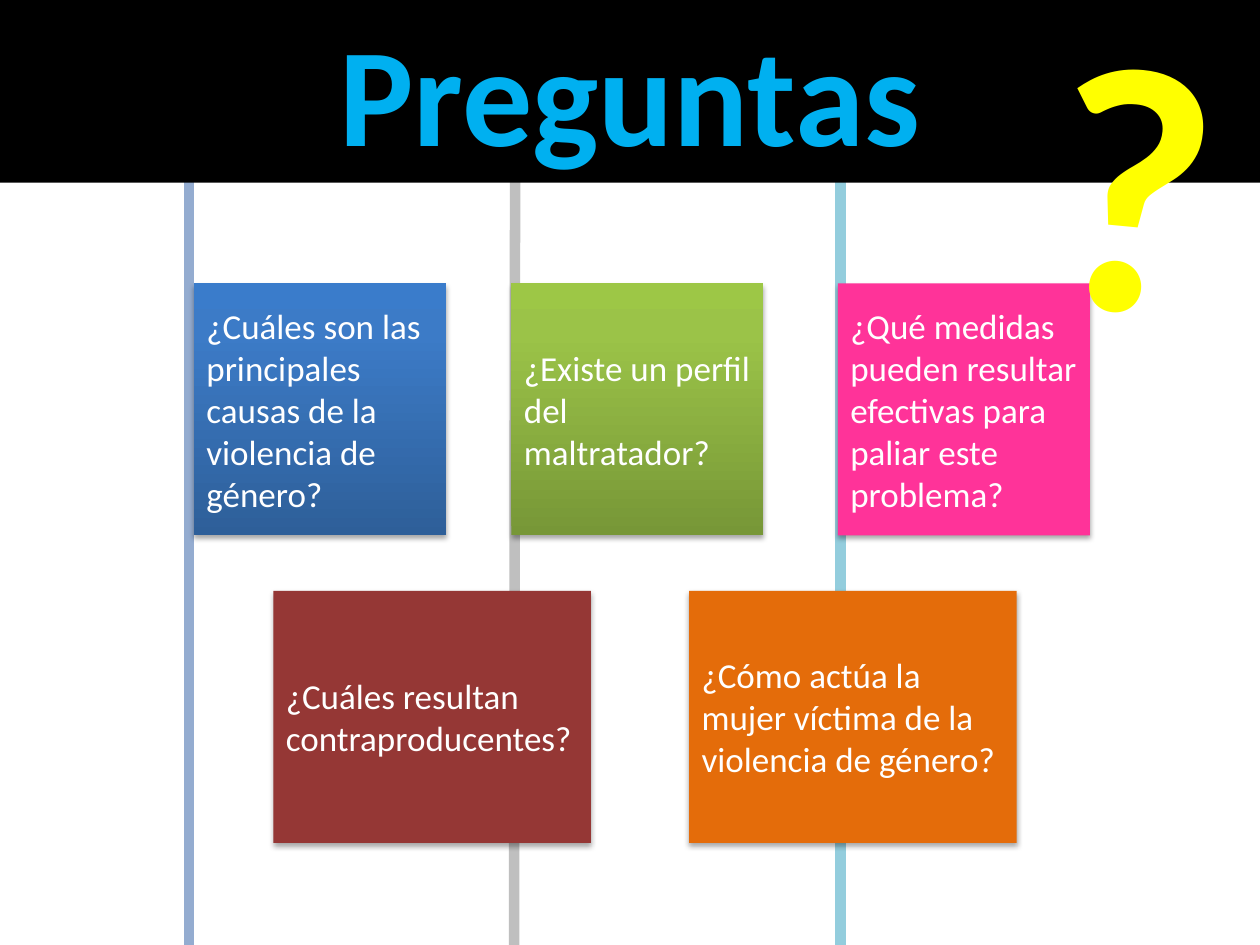
from copy import deepcopy
from dataclasses import dataclass

from lxml.etree import SubElement
from pptx import Presentation
from pptx.dml.color import RGBColor
from pptx.enum.shapes import MSO_CONNECTOR, MSO_SHAPE
from pptx.enum.text import MSO_ANCHOR, PP_ALIGN
from pptx.oxml.ns import qn
from pptx.shapes.autoshape import Shape
from pptx.slide import Slide
from pptx.util import Inches, Pt

FONT = "Calibri"
WHITE = RGBColor(0xFF, 0xFF, 0xFF)
BLACK = RGBColor(0x00, 0x00, 0x00)
SKY = RGBColor(0x00, 0xB0, 0xF0)
YELLOW = RGBColor(0xFF, 0xFF, 0x00)
PINK = RGBColor(0xFF, 0x33, 0x99)
MAROON = RGBColor(0x95, 0x37, 0x35)
ORANGE = RGBColor(0xE4, 0x6C, 0x0A)
STEEL = RGBColor(0x94, 0xAC, 0xD0)
GREY = RGBColor(0xBF, 0xBF, 0xBF)
AQUA = RGBColor(0x93, 0xCD, 0xDD)
# Gradient colours run from the bottom of a card to its top.
BLUES = (RGBColor(0x2E, 0x5F, 0x99), RGBColor(0x3C, 0x7B, 0xC7),
         RGBColor(0x3A, 0x7C, 0xCB))
GREENS = (RGBColor(0x77, 0x97, 0x37), RGBColor(0x9B, 0xC3, 0x48),
          RGBColor(0x9D, 0xC7, 0x46))
STOPS = (0, 0.8, 1)

WIDTH, HEIGHT = 10, 7.5
SIDE = 2
TOP_ROW, LOW_ROW = 2.25, 4.69


@dataclass
class Rail:
    start: float
    end: float
    color: RGBColor


@dataclass
class Card:
    left: float
    top: float
    width: float
    fills: tuple[RGBColor, ...]
    text: str


RAILS = (
    Rail(1.5, 1.5, STEEL),
    Rail(4.09, 4.08, GREY),
    Rail(6.67, 6.67, AQUA),
)
TOP_CARDS = (
    Card(1.54, TOP_ROW, SIDE, BLUES,
         "¿Cuáles son las principales causas de la violencia de género?"),
    Card(4.06, TOP_ROW, SIDE, GREENS, "¿Existe un perfil del maltratador?"),
    Card(6.65, TOP_ROW, SIDE, (PINK,),
         "¿Qué medidas pueden resultar efectivas para paliar este problema?"),
)
LOW_CARDS = (
    Card(2.17, LOW_ROW, 2.52, (MAROON,), "¿Cuáles resultan contraproducentes?"),
    Card(5.47, LOW_ROW, 2.6, (ORANGE,),
         "¿Cómo actúa la mujer víctima de la violencia de género?"),
)


def draw_rail(slide: Slide, rail: Rail) -> None:
    line = slide.shapes.add_connector(
        MSO_CONNECTOR.STRAIGHT, Inches(rail.start), Inches(0),
        Inches(rail.end), Inches(HEIGHT))
    line.line.color.rgb = rail.color
    line.line.width = Pt(6)
    SubElement(line._element.spPr, qn("a:effectLst"))


def add_box(slide: Slide, left: float, top: float, width: float,
            height: float) -> Shape:
    box = slide.shapes.add_shape(
        MSO_SHAPE.RECTANGLE, Inches(left), Inches(top),
        Inches(width), Inches(height))
    box.shadow.inherit = False
    box.line.fill.background()
    return box


def set_text(box: Shape, text: str, size: int, color: RGBColor,
             bold: bool = False, align: PP_ALIGN = PP_ALIGN.LEFT,
             anchor: MSO_ANCHOR = MSO_ANCHOR.TOP) -> None:
    frame = box.text_frame
    frame.word_wrap = True
    frame.vertical_anchor = anchor
    para = frame.paragraphs[0]
    para.alignment = align
    run = para.add_run()
    run.text = text
    font = run.font
    font.name, font.size, font.bold = FONT, Pt(size), bold
    font.color.rgb = color


def set_fill(box: Shape, fills: tuple[RGBColor, ...]) -> None:
    """Fill with one plain colour, or with a gradient that rises."""
    fill = box.fill
    if len(fills) == 1:
        fill.solid()
        fill.fore_color.rgb = fills[0]
        return
    fill.gradient()
    fill.gradient_angle = 90
    stops = box._element.spPr.find(".//" + qn("a:gsLst"))
    stops.append(deepcopy(stops[-1]))
    for stop, place, color in zip(fill.gradient_stops, STOPS, fills):
        stop.position = place
        stop.color.rgb = color


def add_shadow(box: Shape) -> None:
    effects = box._element.spPr.find(qn("a:effectLst"))
    shadow = SubElement(
        effects, qn("a:outerShdw"), blurRad=str(Pt(3.1)), dist=str(Pt(1.8)),
        dir="5400000", rotWithShape="0")
    color = SubElement(shadow, qn("a:srgbClr"), val=str(BLACK))
    SubElement(color, qn("a:alpha"), val="35000")


def draw_card(slide: Slide, card: Card) -> None:
    box = add_box(slide, card.left, card.top, card.width, SIDE)
    set_fill(box, card.fills)
    add_shadow(box)
    set_text(box, card.text, 20, WHITE, anchor=MSO_ANCHOR.MIDDLE)


def draw_title(slide: Slide) -> None:
    band = add_box(slide, 0, 0, WIDTH, 1.45)
    set_fill(band, (BLACK,))
    set_text(band, "Preguntas", 80, SKY, True, PP_ALIGN.CENTER)
    mark = slide.shapes.add_textbox(
        Inches(8.15), Inches(-0.35), Inches(1.71), Inches(3.47))
    mark.rotation = 5.5
    set_text(mark, "?", 200, YELLOW, True, PP_ALIGN.CENTER)


def main() -> None:
    deck = Presentation()
    deck.slide_width, deck.slide_height = Inches(WIDTH), Inches(HEIGHT)
    slide = deck.slides.add_slide(deck.slide_layouts[6])
    for rail, card in zip(RAILS, TOP_CARDS):
        draw_rail(slide, rail)
        draw_card(slide, card)
    draw_title(slide)
    for card in LOW_CARDS:
        draw_card(slide, card)
    deck.save("out.pptx")


if __name__ == "__main__":
    main()
